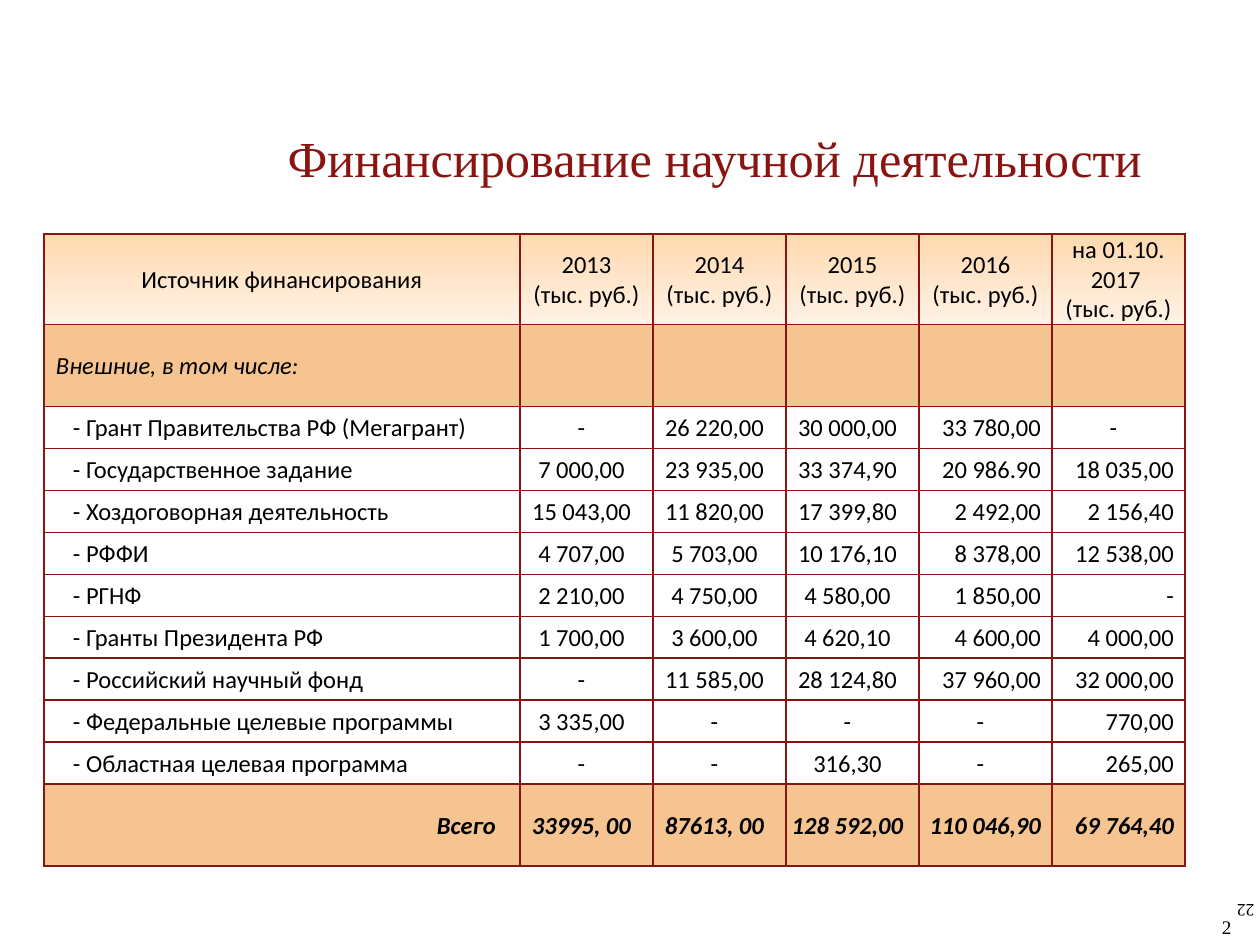
from lxml import etree
from pptx import Presentation
from pptx.dml.color import RGBColor
from pptx.enum.text import MSO_ANCHOR, PP_ALIGN
from pptx.oxml.ns import qn
from pptx.util import Emu, Pt

LEFT, CENTER, RIGHT = PP_ALIGN.LEFT, PP_ALIGN.CENTER, PP_ALIGN.RIGHT
TOP, MIDDLE = MSO_ANCHOR.TOP, MSO_ANCHOR.MIDDLE
PX = 914400 // 126
BORDER_EMU = 12700
COLORS = {
    "maroon": "8A1411",
    "black": "000000",
    "band": "F5C491",
    "header_top": "FFD9AF",
    "header_bottom": "FFF2E6",
}
SERIF, SANS = "Times New Roman", "Calibri"

UNIT = "(тыс. руб.)"
HEADER = ["Источник финансирования"] + [
    f"{year}\n{UNIT}" for year in ("2013", "2014", "2015", "2016", "на 01.10. 2017 ")
]
GROUP = ["Внешние, в том числе:", "", "", "", "", ""]
SOURCES = [
    ["Грант Правительства РФ (Мегагрант)", "-", "26 220,00", "30 000,00", "33 780,00", "-"],
    ["Государственное задание", "7 000,00", "23 935,00", "33 374,90", "20 986.90", "18 035,00"],
    ["Хоздоговорная деятельность", "15 043,00", "11 820,00", "17 399,80", "2 492,00", "2 156,40"],
    ["РФФИ", "4 707,00", "5 703,00", "10 176,10", "8 378,00", "12 538,00"],
    ["РГНФ", "2 210,00", "4 750,00", "4 580,00", "1 850,00", "-"],
    ["Гранты Президента РФ", "1 700,00", "3 600,00", "4 620,10", "4 600,00", "4 000,00"],
    ["Российский научный фонд", "-", "11 585,00", "28 124,80", "37 960,00", "32 000,00"],
    ["Федеральные целевые программы", "3 335,00", "-", "-", "-", "770,00"],
    ["Областная целевая программа", "-", "-", "316,30", "-", "265,00"],
]
TOTAL = ["Всего", "33995, 00", "87613, 00", "128 592,00", "110 046,90", "69 764,40"]
CENTERED_COLUMNS = 3
RIGHT_DASH_SOURCE = "РГНФ"


def px(length):
    return Emu(length * PX)


def color(name):
    return RGBColor.from_string(COLORS[name])


def value_align(source, column, value):
    if column <= CENTERED_COLUMNS:
        return CENTER
    return CENTER if value == "-" and source != RIGHT_DASH_SOURCE else RIGHT


class SlideBuilder:
    def __init__(self, presentation):
        self.slide = presentation.slides.add_slide(presentation.slide_layouts[6])

    def add_lines(self, frame, text, align, size, font, ink="black", bold=False, italic=False):
        for index, line in enumerate(text.split("\n")):
            paragraph = frame.paragraphs[0] if index == 0 else frame.add_paragraph()
            paragraph.alignment = align
            run = paragraph.add_run()
            run.text = line
            run.font.size = Pt(size)
            run.font.name = font
            run.font.bold = bold
            run.font.italic = italic
            run.font.color.rgb = color(ink)

    def text(self, box, text, align, size, margins, ink="black", anchor=MIDDLE, wrap=False, rotation=0):
        shape = self.slide.shapes.add_textbox(*map(px, box))
        shape.rotation = rotation
        frame = shape.text_frame
        frame.word_wrap = wrap
        frame.vertical_anchor = anchor
        frame.margin_left, frame.margin_top, frame.margin_right, frame.margin_bottom = map(px, margins)
        self.add_lines(frame, text, align, size, SERIF, ink)

    def table(self, left, top, widths, heights):
        shape = self.slide.shapes.add_table(
            len(heights), len(widths), px(left), px(top), px(sum(widths)), px(sum(heights))
        )
        table = shape.table
        table.first_row = table.horz_banding = False
        for column, width in zip(table.columns, widths):
            column.width = px(width)
        for row, height in zip(table.rows, heights):
            row.height = px(height)
        return table

    def borders(self, cell):
        properties = cell._tc.get_or_add_tcPr()
        for index, side in enumerate(("a:lnL", "a:lnR", "a:lnT", "a:lnB")):
            line = etree.Element(qn(side), w=str(BORDER_EMU))
            fill = etree.SubElement(line, qn("a:solidFill"))
            etree.SubElement(fill, qn("a:srgbClr"), val=COLORS["maroon"])
            properties.insert(index, line)

    def fill(self, cell, kind):
        if kind == "header":
            cell.fill.gradient()
            cell.fill.gradient_angle = 270
            for stop, name in zip(cell.fill.gradient_stops, ("header_top", "header_bottom")):
                stop.color.rgb = color(name)
        elif kind == "band":
            cell.fill.solid()
            cell.fill.fore_color.rgb = color("band")
        else:
            cell.fill.background()

    def cell(self, cell, text, align, kind=None, left=1, right=1, bold=False, italic=False):
        cell.vertical_anchor = MIDDLE
        cell.margin_left, cell.margin_right = px(left), px(right)
        cell.margin_top, cell.margin_bottom = px(1), px(0)
        self.fill(cell, kind)
        self.borders(cell)
        if text:
            self.add_lines(cell.text_frame, text, align, 14, SANS, bold=bold, italic=italic)


def main():
    presentation = Presentation()
    presentation.slide_width, presentation.slide_height = px(1260), px(945)
    builder = SlideBuilder(presentation)

    heights = [82, 82] + [42] * len(SOURCES) + [82]
    table = builder.table(44, 234, [476] + [133] * 5, heights)
    last_row = len(heights) - 1
    for column in range(len(HEADER)):
        builder.cell(table.cell(0, column), HEADER[column], CENTER, "header")
        builder.cell(table.cell(1, column), GROUP[column], LEFT, "band", left=12, italic=True)
        builder.cell(
            table.cell(last_row, column), TOTAL[column],
            CENTER if 1 <= column <= CENTERED_COLUMNS else RIGHT, "band",
            right=11 if column else 24, bold=True, italic=True,
        )
    for row, (source, *values) in enumerate(SOURCES, start=2):
        builder.cell(table.cell(row, 0), f"- {source}", LEFT, left=29)
        for column, value in enumerate(values, start=1):
            builder.cell(table.cell(row, column), value, value_align(source, column, value), right=11)

    builder.text(
        (213, 116, 1004, 68), "Финансирование научной деятельности", CENTER, 28.8,
        (12, 11, 12, 0), ink="maroon", anchor=TOP, wrap=True,
    )
    small_margins = (6, 6, 6, 6)
    builder.text((1231, 900, 44, 23), "22", RIGHT, 10, small_margins, rotation=180)
    builder.text((1216, 908, 21, 37), "2", RIGHT, 11, small_margins)
    presentation.save("out.pptx")


if __name__ == "__main__":
    main()
